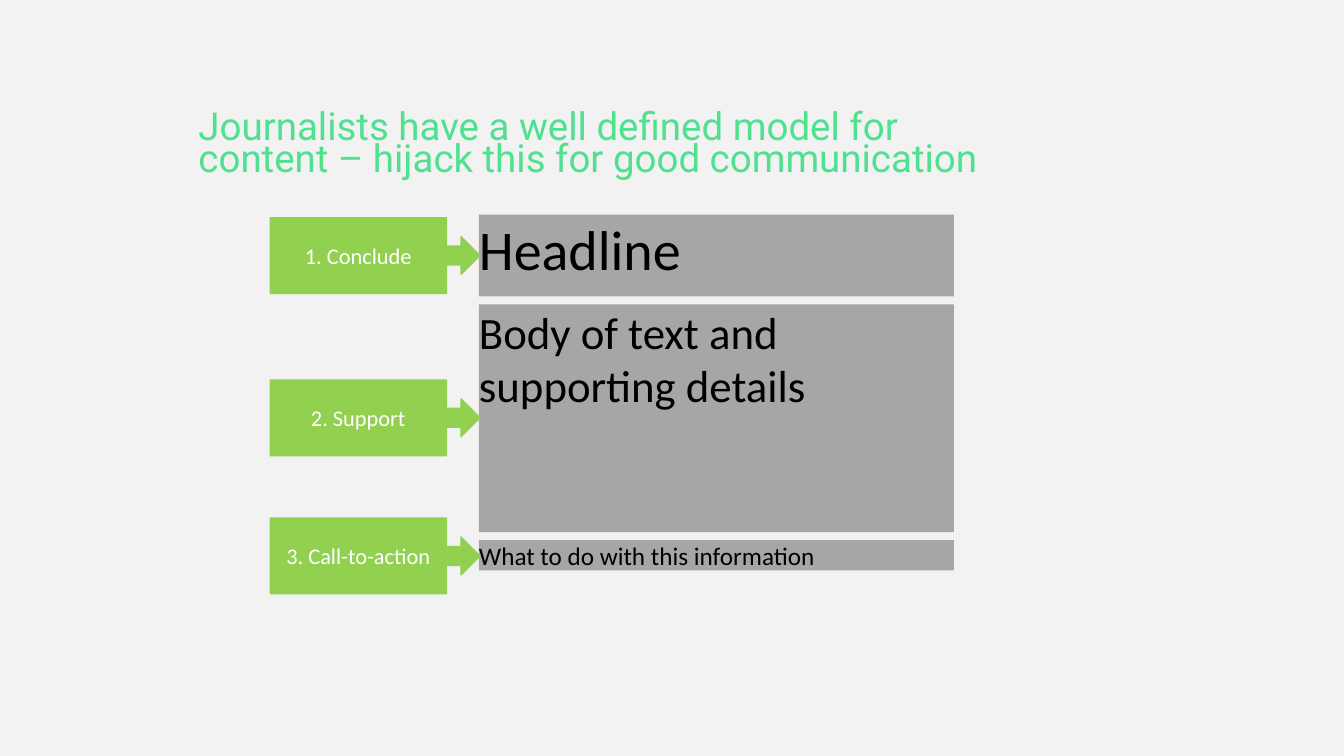
from pptx import Presentation
from pptx.dml.color import RGBColor
from pptx.enum.shapes import MSO_SHAPE
from pptx.enum.text import MSO_ANCHOR, PP_ALIGN
from pptx.util import Inches, Pt

RECT = MSO_SHAPE.RECTANGLE
CALLOUT = MSO_SHAPE.RIGHT_ARROW_CALLOUT
TOP, MIDDLE = MSO_ANCHOR.TOP, MSO_ANCHOR.MIDDLE
LEFT, CENTER = PP_ALIGN.LEFT, PP_ALIGN.CENTER

PAPER, MINT, GREEN, GREY = "F2F2F2", "4FE18F", "92D050", "A6A6A6"
BLACK, WHITE = "000000", "FFFFFF"

# Step label, callout top, panel text, panel top, panel height, text size
STEPS = [
    ("1. Conclude", 2.16, "Headline", 2.13, 0.81, 40),
    ("2. Support", 3.77, "Body of text and supporting details", 3.02, 2.26, 32),
    ("3. Call-to-action", 5.14, "What to do with this information", 5.36, 0.3, 18),
]


def color(code):
    return RGBColor.from_string(code)


def write(shape, text, size, font, ink, align, anchor):
    frame = shape.text_frame
    frame.word_wrap = True
    frame.vertical_anchor = anchor
    frame.text = text
    para = frame.paragraphs[0]
    para.alignment = align
    for run in para.runs:
        run.font.size = Pt(size)
        run.font.name = font
        run.font.color.rgb = color(ink)
    return para


def add_title(slide, text):
    box = slide.shapes.add_textbox(Inches(1.87), Inches(1.06), Inches(9.24), Inches(0.79))
    para = write(box, text, 27.5, "Roboto", MINT, LEFT, MIDDLE)
    para.line_spacing = 0.7


def add_block(slide, kind, left, top, width, height, fill):
    block = slide.shapes.add_shape(
        kind, Inches(left), Inches(top), Inches(width), Inches(height))
    block.shadow.inherit = False
    block.fill.solid()
    block.fill.fore_color.rgb = color(fill)
    block.line.fill.background()
    frame = block.text_frame
    frame.margin_left = frame.margin_right = 0
    frame.margin_top = frame.margin_bottom = 0
    return block


def add_panel(slide, text, top, height, size):
    panel = add_block(slide, RECT, 4.75, top, 4.71, height, GREY)
    write(panel, text, size, "Calibri", BLACK, LEFT, TOP)


def add_step(slide, label, top):
    step = add_block(slide, CALLOUT, 2.68, top, 2.08, 0.75, GREEN)
    step.line.color.rgb = color(GREEN)
    step.line.width = Pt(1)
    for i, value in enumerate((0.25, 0.25, 0.25, 0.84)):
        step.adjustments[i] = value
    write(step, label, 16, "Calibri", WHITE, CENTER, MIDDLE)


def main():
    deck = Presentation()
    deck.slide_width, deck.slide_height = Inches(13.33), Inches(7.5)
    slide = deck.slides.add_slide(deck.slide_layouts[6])
    slide.background.fill.solid()
    slide.background.fill.fore_color.rgb = color(PAPER)

    # Title
    add_title(slide, "Journalists have a well defined model for\v"
                     "content – hijack this for good communication")

    # Each step points at its part of the article
    for label, step_top, text, top, height, size in STEPS:
        add_panel(slide, text, top, height, size)
        add_step(slide, label, step_top)

    deck.save("out.pptx")


if __name__ == "__main__":
    main()
